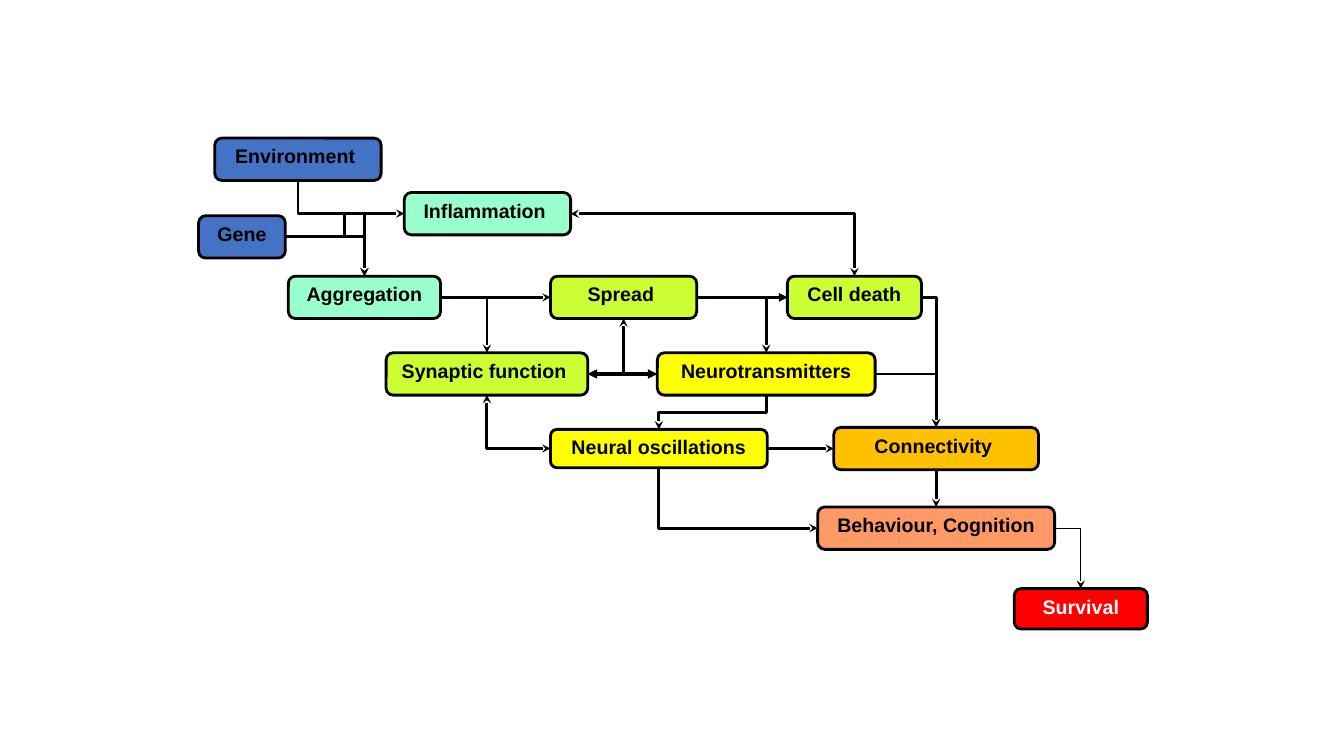
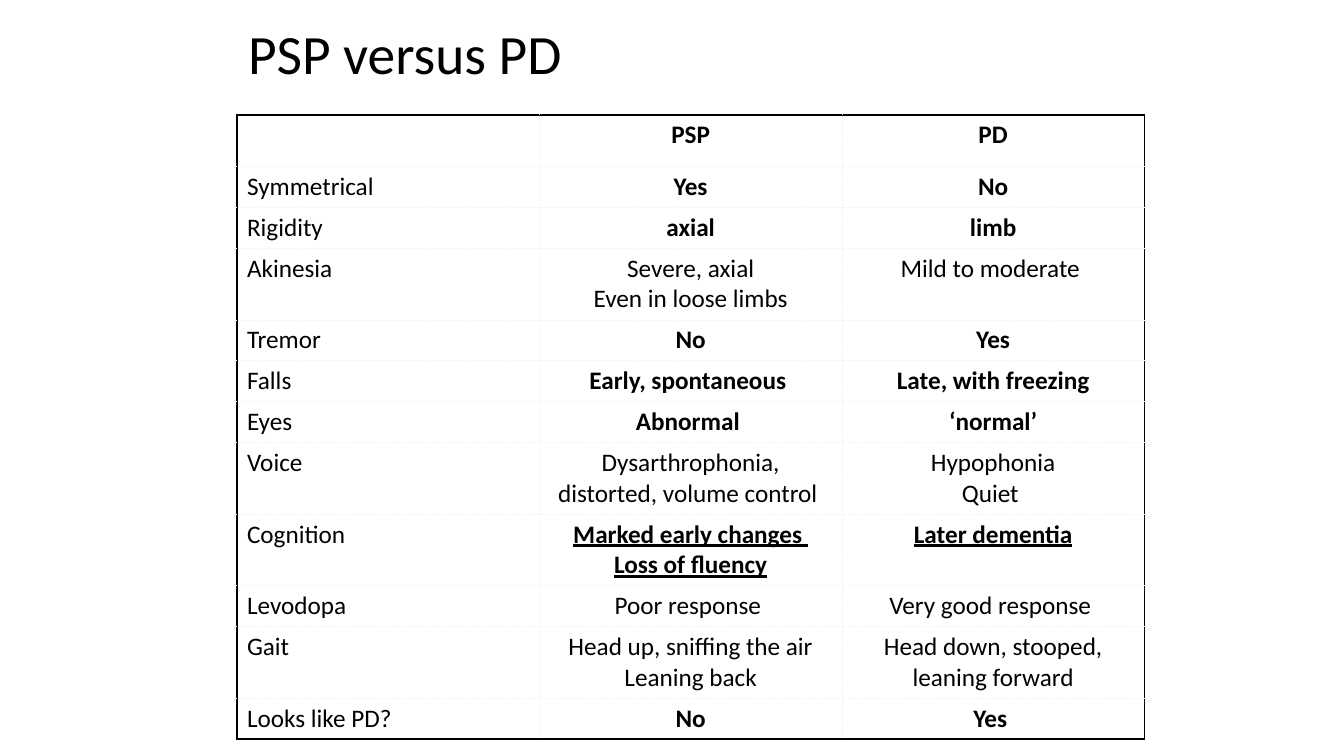
from lxml import etree
from pptx import Presentation
from pptx.dml.color import RGBColor
from pptx.enum.shapes import MSO_CONNECTOR, MSO_SHAPE
from pptx.enum.text import MSO_ANCHOR, MSO_AUTO_SIZE, PP_ALIGN
from pptx.oxml.ns import qn
from pptx.util import Emu, Pt

PX = 9144  # 100 px to the inch
STRAIGHT, ELBOW = MSO_CONNECTOR.STRAIGHT, MSO_CONNECTOR.ELBOW
ROUNDED = MSO_SHAPE.ROUNDED_RECTANGLE
TOP_ANCHOR, MIDDLE = MSO_ANCHOR.TOP, MSO_ANCHOR.MIDDLE
LEFT_ALIGN, CENTER = PP_ALIGN.LEFT, PP_ALIGN.CENTER
TOP, LEFT, BOTTOM, RIGHT = range(4)
TITLE_ONLY, BLANK = 5, 6

COLORS = {
    "black": "000000", "white": "FFFFFF", "blue": "4472C4", "mint": "99FFCC",
    "lime": "CCFF33", "yellow": "FFFF00", "amber": "FFC000",
    "salmon": "FF9966", "red": "FF0000", "grid": "F1F0F0",
}

# key: (text, fill, left, top, width, height)
STAGES = {
    "gene": ("Gene", "blue", 197, 214, 86, 42),
    "environment": ("Environment ", "blue", 213, 137, 165, 42),
    "inflammation": ("Inflammation ", "mint", 401, 191, 165, 42),
    "spread": ("Spread ", "lime", 546, 274, 145, 42),
    "synaptic": ("Synaptic function ", "lime", 383, 350, 200, 42),
    "oscillations": ("Neural oscillations", "yellow", 546, 426, 215, 38),
    "death": ("Cell death", "lime", 781, 274, 133, 42),
    "transmitters": ("Neurotransmitters", "yellow", 652, 350, 216, 42),
    "connectivity": ("Connectivity ", "amber", 827, 424, 203, 42),
    "aggregation": ("Aggregation", "mint", 286, 274, 151, 42),
    "behaviour": ("Behaviour, Cognition", "salmon", 811, 503, 235, 42),
    "survival": ("Survival", "red", 1006, 584, 132, 40),
}

# (from, side, to, side, shape, head, tail, width in points, bend in 1/100000)
ONE_BEND, TWO_BENDS, NO_BEND = "bentConnector2", "bentConnector3", None
STEALTH, TRIANGLE = "stealth", "triangle"
LINKS = [
    ("gene", RIGHT, "aggregation", TOP, ONE_BEND, None, STEALTH, 2, None),
    ("gene", RIGHT, "inflammation", LEFT, TWO_BENDS, None, STEALTH, 2, 50000),
    ("environment", BOTTOM, "aggregation", TOP, TWO_BENDS, None, STEALTH, 2, 34500),
    ("aggregation", RIGHT, "spread", LEFT, NO_BEND, None, STEALTH, 2, None),
    ("aggregation", RIGHT, "synaptic", TOP, ONE_BEND, None, STEALTH, 2, None),
    ("synaptic", RIGHT, "spread", BOTTOM, ONE_BEND, STEALTH, STEALTH, 2, None),
    ("inflammation", RIGHT, "death", TOP, ONE_BEND, STEALTH, STEALTH, 2, None),
    ("death", LEFT, "transmitters", TOP, ONE_BEND, STEALTH, STEALTH, 2, None),
    ("death", RIGHT, "connectivity", TOP, ONE_BEND, None, STEALTH, 2, None),
    ("transmitters", RIGHT, "connectivity", TOP, ONE_BEND, None, STEALTH, 2, None),
    ("oscillations", LEFT, "synaptic", BOTTOM, ONE_BEND, STEALTH, STEALTH, 2, None),
    ("transmitters", BOTTOM, "oscillations", TOP, TWO_BENDS, None, STEALTH, 2, 50000),
    ("behaviour", LEFT, "oscillations", BOTTOM, ONE_BEND, STEALTH, None, 2, None),
    ("oscillations", RIGHT, "connectivity", LEFT, NO_BEND, None, STEALTH, 2, None),
    ("connectivity", BOTTOM, "behaviour", TOP, NO_BEND, None, STEALTH, 2, None),
    ("spread", RIGHT, "death", LEFT, NO_BEND, None, TRIANGLE, 2, None),
    ("behaviour", RIGHT, "survival", TOP, ONE_BEND, None, STEALTH, 0.75, None),
    ("transmitters", LEFT, "synaptic", RIGHT, NO_BEND, TRIANGLE, TRIANGLE, 2.25, None),
]

TITLE = "PSP versus PD"
TITLE_BOX = (236, 23, 900, 66)
TABLE_LEFT, TABLE_TOP, COLUMN_WIDTH = 235, 114, 300
HEADER_HEIGHT, ONE_LINE, TWO_LINES = 51, 40, 70
PLAIN, BOLD, UNDERLINED = range(3)
# (feature, PSP, PD, emphasis of the two findings, row height)
COMPARISON = [
    ("", "PSP", "PD", BOLD, HEADER_HEIGHT),
    ("Symmetrical", "Yes", "No", BOLD, ONE_LINE),
    ("Rigidity", "axial", "limb", BOLD, ONE_LINE),
    ("Akinesia", "Severe, axial\nEven in loose limbs", "Mild to moderate ", PLAIN, TWO_LINES),
    ("Tremor", "No", "Yes", BOLD, ONE_LINE),
    ("Falls", "Early, spontaneous ", "Late, with freezing", BOLD, ONE_LINE),
    ("Eyes", "Abnormal ", "‘normal’", BOLD, ONE_LINE),
    ("Voice", "Dysarthrophonia, distorted, volume control ", "Hypophonia\nQuiet ",
     PLAIN, TWO_LINES),
    ("Cognition", "Marked early changes \nLoss of fluency", "Later dementia",
     UNDERLINED, TWO_LINES),
    ("Levodopa", "Poor response ", "Very good response ", PLAIN, ONE_LINE),
    ("Gait", "Head up, sniffing the air\nLeaning back",
     "Head down, stooped, leaning forward", PLAIN, TWO_LINES),
    ("Looks like PD?", "No", "Yes ", BOLD, ONE_LINE),
]


def px(*lengths):
    return [Emu(length * PX) for length in lengths]


def rgb(name):
    return RGBColor.from_string(COLORS[name])


def style_text(frame, font_name, size, color="black", align=LEFT_ALIGN,
               bold=False, underline=False):
    for paragraph in frame.paragraphs:
        paragraph.alignment = align
        font = paragraph.font
        font.name, font.size, font.bold = font_name, Pt(size), bold
        font.underline = underline
        font.color.rgb = rgb(color)


def add_stage(slide, text, fill, *box):
    stage = slide.shapes.add_shape(ROUNDED, *px(*box))
    stage.shadow.inherit = False
    stage.fill.solid()
    stage.fill.fore_color.rgb = rgb(fill)
    stage.line.color.rgb = rgb("black")
    stage.line.width = Pt(2)
    frame = stage.text_frame
    frame.text = text
    frame.vertical_anchor = TOP_ANCHOR
    frame.margin_left, frame.margin_top, frame.margin_right, frame.margin_bottom = px(7, 4, 7, 4)
    style_text(frame, "Arial", 14, "white" if fill == "red" else "black", CENTER, True)
    return stage


def turn_downwards(link):
    """Rotate a two-bend connector so that it leaves and arrives vertically."""
    dx, dy = link.end_x - link.begin_x, link.end_y - link.begin_y
    center_x, center_y = link.begin_x + dx // 2, link.begin_y + dy // 2
    link.width, link.height = Emu(abs(dy)), Emu(abs(dx))
    link.left = Emu(center_x - link.width // 2)
    link.top = Emu(center_y - link.height // 2)
    xfrm = link._element.spPr.find(qn("a:xfrm"))
    xfrm.set("rot", "5400000")
    xfrm.set("flipH", "0")
    xfrm.set("flipV", "1" if dx > 0 else "0")


def add_link(slide, start, start_side, end, end_side, bends, head, tail, width, bend_at):
    link = slide.shapes.add_connector(ELBOW if bends else STRAIGHT, 0, 0, 0, 0)
    link.begin_connect(start, start_side)
    link.end_connect(end, end_side)
    properties = link._element.spPr
    if bends:
        geometry = properties.find(qn("a:prstGeom"))
        geometry.set("prst", bends)
        if bend_at:
            etree.SubElement(geometry.find(qn("a:avLst")), qn("a:gd"),
                             name="adj1", fmla=f"val {bend_at}")
        if start_side == BOTTOM:
            turn_downwards(link)
    link.line.color.rgb = rgb("black")
    link.line.width = Pt(width)
    outline = properties.find(qn("a:ln"))
    for tag, arrow in (("a:headEnd", head), ("a:tailEnd", tail)):
        if arrow:
            etree.SubElement(outline, qn(tag), type=arrow)
    etree.SubElement(properties, qn("a:effectLst"))


def set_borders(cell, outer_sides):
    """Black lines on the outer sides, pale dotted ones elsewhere."""
    properties = cell._tc.get_or_add_tcPr()
    for index, side in enumerate("LRTB"):
        outer = side in outer_sides
        border = etree.Element(qn(f"a:ln{side}"), w=str(Pt(1 if outer else 0.25)))
        fill = etree.SubElement(border, qn("a:solidFill"))
        etree.SubElement(fill, qn("a:srgbClr"), val=COLORS["black" if outer else "grid"])
        etree.SubElement(border, qn("a:prstDash"), val="solid" if outer else "sysDot")
        properties.insert(index, border)


def build_pathway(deck):
    slide = deck.slides.add_slide(deck.slide_layouts[BLANK])
    stages = {key: add_stage(slide, *stage) for key, stage in STAGES.items()}
    for start, start_side, end, end_side, *look in LINKS:
        add_link(slide, stages[start], start_side, stages[end], end_side, *look)


def build_comparison(deck):
    slide = deck.slides.add_slide(deck.slide_layouts[TITLE_ONLY])
    title = slide.shapes.title
    title.left, title.top, title.width, title.height = px(*TITLE_BOX)
    frame = title.text_frame
    frame.text = TITLE
    frame.vertical_anchor = MIDDLE
    frame.auto_size = MSO_AUTO_SIZE.NONE
    frame.paragraphs[0].line_spacing = 0.9
    style_text(frame, "Calibri", 39.6)

    heights = [row[-1] for row in COMPARISON]
    last_row, last_column = len(COMPARISON) - 1, 2
    table = slide.shapes.add_table(
        len(COMPARISON), 3,
        *px(TABLE_LEFT, TABLE_TOP, 3 * COLUMN_WIDTH, sum(heights))).table
    table.first_row = table.horz_banding = False
    for r, (*texts, emphasis, height) in enumerate(COMPARISON):
        table.rows[r].height = Emu(height * PX)
        for c, text in enumerate(texts):
            cell = table.cell(r, c)
            cell.text = text
            cell.fill.solid()
            cell.fill.fore_color.rgb = rgb("white")
            finding = c > 0
            style_text(cell.text_frame, "Calibri", 18,
                       align=CENTER if finding else LEFT_ALIGN,
                       bold=finding and emphasis != PLAIN,
                       underline=finding and emphasis == UNDERLINED)
            edges = {"L": c == 0, "R": c == last_column, "T": r == 0, "B": r == last_row}
            set_borders(cell, [side for side, outer in edges.items() if outer])


def main():
    deck = Presentation()
    deck.slide_width, deck.slide_height = px(1333, 750)
    build_pathway(deck)
    build_comparison(deck)
    deck.save("out.pptx")


if __name__ == "__main__":
    main()
